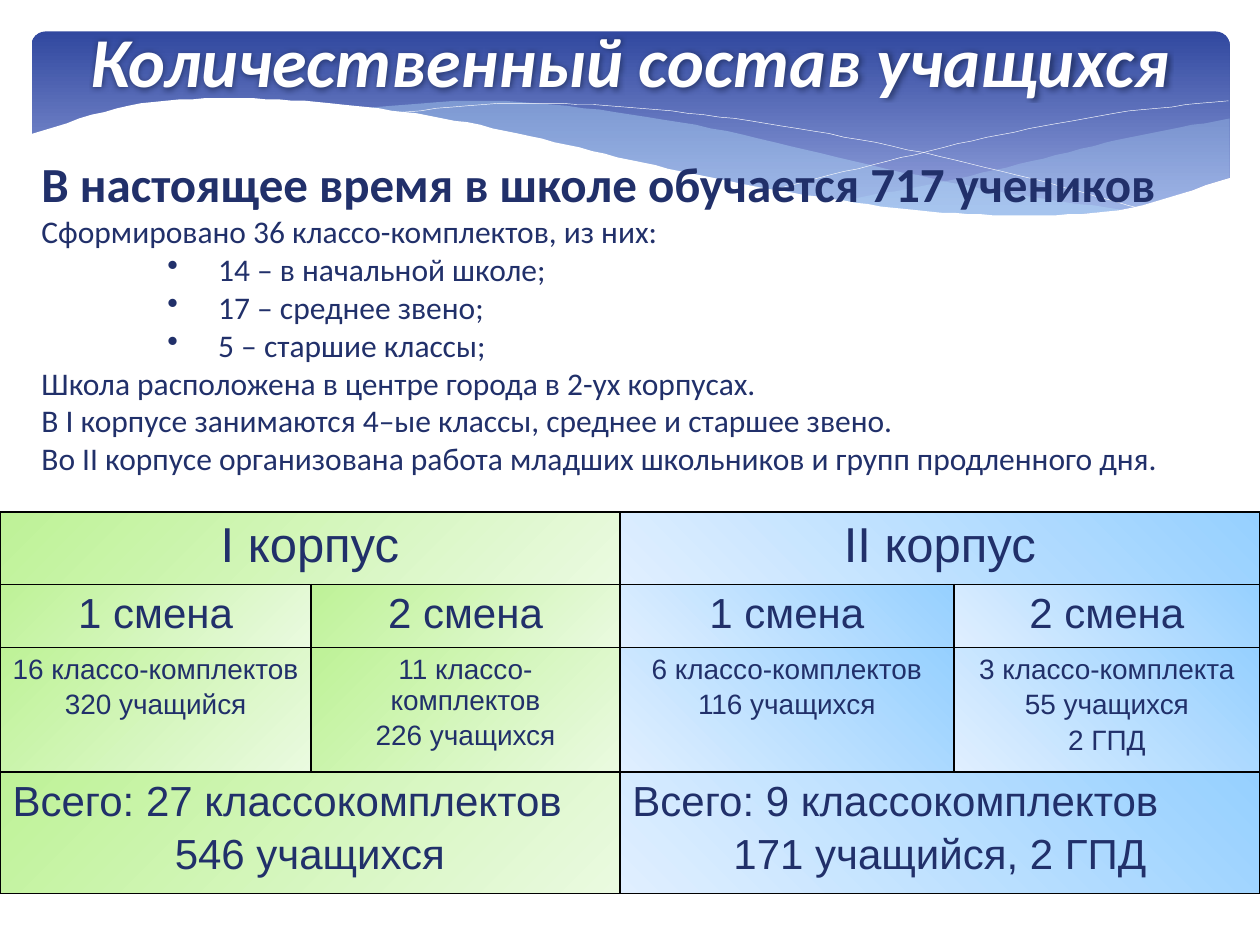
import pptx
import pptx.dml.color
import pptx.enum.shapes
import pptx.enum.text
import pptx.oxml
import pptx.util
from pptx.util import Pt

COLORS = {
    "navy": "21306A", "white": "FFFFFF", "black": "000000", "glow": "17244D",
    "header_top": "31489F", "header_bottom": "95A4DE", "wave": "B4DCFA",
    "green": "BEF297", "pale_green": "EAFAE0", "blue": "96D0FF", "pale_blue": "E0EFFF",
}
NAMESPACE = 'xmlns:a="http://schemas.openxmlformats.org/drawingml/2006/main"'
ALIGN = pptx.enum.text.PP_ALIGN


def style_text(para, font, size, color, bold=False, italic=False):
    for span in para.runs:
        span.font.name = font
        span.font.size = Pt(size)
        span.font.bold = bold
        span.font.italic = italic
        span.font.color.rgb = pptx.dml.color.RGBColor.from_string(COLORS[color])


def fill_gradient(fill, first, last, angle, end=1.0):
    """Fill from first to last; the angle runs counter-clockwise."""
    fill.gradient()
    fill.gradient_angle = angle
    for stop, color, position in zip(fill.gradient_stops, (first, last), (0, end)):
        stop.color.rgb = pptx.dml.color.RGBColor.from_string(COLORS[color])
        stop.position = position


deck = pptx.Presentation()
deck.slide_width, deck.slide_height = Pt(720), Pt(540)
page = deck.slides.add_slide(deck.slide_layouts[5])
shapes = page.shapes

# Header band and its waves
header = shapes.add_shape(pptx.enum.shapes.MSO_SHAPE.ROUNDED_RECTANGLE,
                          Pt(18), Pt(18), Pt(684.7), Pt(112.3))
header.adjustments[0] = 0.071
header.shadow.inherit = False
header.line.fill.background()
fill_gradient(header.fill, "header_top", "header_bottom", 270, 0.9)

# Left, right, opacity, then heights of the upper and lower edge at equal steps,
# in hundredths of an inch; a wave without a lower edge is a white line
waves = [
    (661, 976, 29, [160, 146, 128, 109, 94], [160, 169, 172, 165, 141]),
    (286, 893, 40, [86, 80, 89, 107, 131, 152, 167], [86, 102, 125, 148, 165, 173, 167]),
    (309, 907, 100, [90, 82, 86, 98, 116, 139, 166], []),
    (613, 975, 100, [151, 128, 107, 90, 80], []),
    (23, 977, 100, [107, 84, 78, 82, 92, 108, 127, 144, 158, 168, 171, 165, 141], [224, 224]),
]
SMOOTHNESS = 8
for left, right, opacity, upper, lower in waves:
    outline = []
    for edge, start, finish in ((upper, left, right), (lower[::-1], right, left)):
        if not edge:
            continue
        step = (finish - start) / (len(edge) - 1)
        padded = [2 * edge[0] - edge[1], *edge, 2 * edge[-1] - edge[-2]]
        # Catmull-Rom curve through the heights
        for index, (a, b, c, d) in enumerate(zip(padded, padded[1:], padded[2:], padded[3:])):
            for part in range(SMOOTHNESS):
                t = part / SMOOTHNESS
                y = b + t * ((c - a) + t * ((2 * a - 5 * b + 4 * c - d)
                                            + t * (3 * b - 3 * c + d - a))) / 2
                outline.append((start + (index + t) * step, y))
        outline.append((finish, edge[-1]))
    builder = shapes.build_freeform(*outline[0], scale=Pt(0.72))
    builder.add_line_segments(outline[1:], close=bool(lower))
    wave = builder.convert_to_shape()
    wave.shadow.inherit = False
    if not lower:
        wave.fill.background()
        wave.line.width = Pt(0.25)
        wave.line.color.rgb = pptx.dml.color.RGBColor.from_string(COLORS["white"])
        continue
    wave.line.fill.background()
    wave.fill.solid()
    color = "white" if opacity == 100 else "wave"
    wave.fill.fore_color.rgb = pptx.dml.color.RGBColor.from_string(COLORS[color])
    if opacity < 100:
        tint = wave.element.spPr.find(".//{*}solidFill/{*}srgbClr")
        tint.append(pptx.oxml.parse_xml(f'<a:alpha {NAMESPACE} val="{opacity * 1000}"/>'))

# Title, brought in front of the header
title = shapes.title
title.element.getparent().append(title.element)
title.left, title.top, title.width, title.height = Pt(0), Pt(6.5), Pt(720), Pt(55.5)
title.text_frame.text = "Количественный состав учащихся"
title.text_frame.vertical_anchor = pptx.enum.text.MSO_ANCHOR.TOP
title.text_frame.auto_size = pptx.enum.text.MSO_AUTO_SIZE.NONE
title_para = title.text_frame.paragraphs[0]
title_para.alignment = ALIGN.CENTER
style_text(title_para, "Calibri", 40, "white", bold=True, italic=True)
title.element.find(".//{*}rPr/{*}solidFill").addnext(pptx.oxml.parse_xml(
    f'<a:effectLst {NAMESPACE}><a:glow rad="{Pt(5)}"><a:srgbClr val="{COLORS["glow"]}">'
    '<a:alpha val="60000"/></a:srgbClr></a:glow></a:effectLst>'))

# Summary text
summary = [
    ("В настоящее время в школе обучается 717 учеников", False),
    ("Сформировано 36 классо-комплектов, из них:", False),
    ("14 – в начальной школе;", True),
    ("17 – среднее звено;", True),
    ("5 – старшие классы;", True),
    ("Школа расположена в центре города в 2-ух корпусах.", False),
    ("В I корпусе занимаются 4–ые классы, среднее и старшее звено.", False),
    ("Во II корпусе организована работа младших школьников и групп продленного дня.", False),
]
box = shapes.add_textbox(Pt(16.6), Pt(84.2), Pt(703.4), Pt(193.7))
box.text_frame.word_wrap = True
box.text_frame.text = "\n".join(text for text, _ in summary)
for index, (para, (_, bulleted)) in enumerate(zip(box.text_frame.paragraphs, summary)):
    heading = index == 0
    style_text(para, "Calibri", 28 if heading else 18, "navy", bold=heading)
    if bulleted:
        properties = para._p.get_or_add_pPr()
        properties.set("marL", str(Pt(101)))
        properties.set("indent", str(-Pt(29)))
        properties.append(pptx.oxml.parse_xml(f'<a:buChar {NAMESPACE} char="•"/>'))

# Table of buildings and shifts
rows = [
    (41.5, 28, ["I корпус", None, "II корпус", None]),
    (35.7, 24, ["1 смена", "2 смена"] * 2),
    (71, 16, ["16 классо-комплектов\n320 учащийся", "11 классо-комплектов\n226 учащихся",
              "6 классо-комплектов\n116 учащихся", "3 классо-комплекта\n55 учащихся\n2 ГПД"]),
    (69.5, 24, ["Всего: 27 классокомплектов\n546 учащихся", None,
                "Всего: 9 классокомплектов\n171 учащийся, 2 ГПД", None]),
]
table = shapes.add_table(4, 4, Pt(0), Pt(292.5), Pt(720), Pt(217.7)).table
table.first_row = table.horz_banding = False
for column, width in zip(table.columns, (177.84, 176.4, 190.8, 174.96)):
    column.width = Pt(width)
for row_index, (height, size, texts) in enumerate(rows):
    table.rows[row_index].height = Pt(height)
    for column_index, text in enumerate(texts):
        cell = table.cell(row_index, column_index)
        if column_index < 2:
            fill_gradient(cell.fill, "green", "pale_green", 315)
        else:
            fill_gradient(cell.fill, "blue", "pale_blue", 225)
        for position, side in enumerate("LRTB"):
            cell._tc.get_or_add_tcPr().insert(position, pptx.oxml.parse_xml(
                f'<a:ln{side} {NAMESPACE} w="{Pt(1)}"><a:solidFill>'
                f'<a:srgbClr val="{COLORS["black"]}"/></a:solidFill></a:ln{side}>'))
        if text is None:
            table.cell(row_index, column_index - 1).merge(cell)
            continue
        cell.text_frame.text = text
        for index, para in enumerate(cell.text_frame.paragraphs):
            total_label = para.text.startswith("Всего")
            para.alignment = ALIGN.LEFT if total_label else ALIGN.CENTER
            para.space_before = Pt(size * 0.16 if index else 0)
            style_text(para, "Arial", size, "navy")

deck.save("out.pptx")
